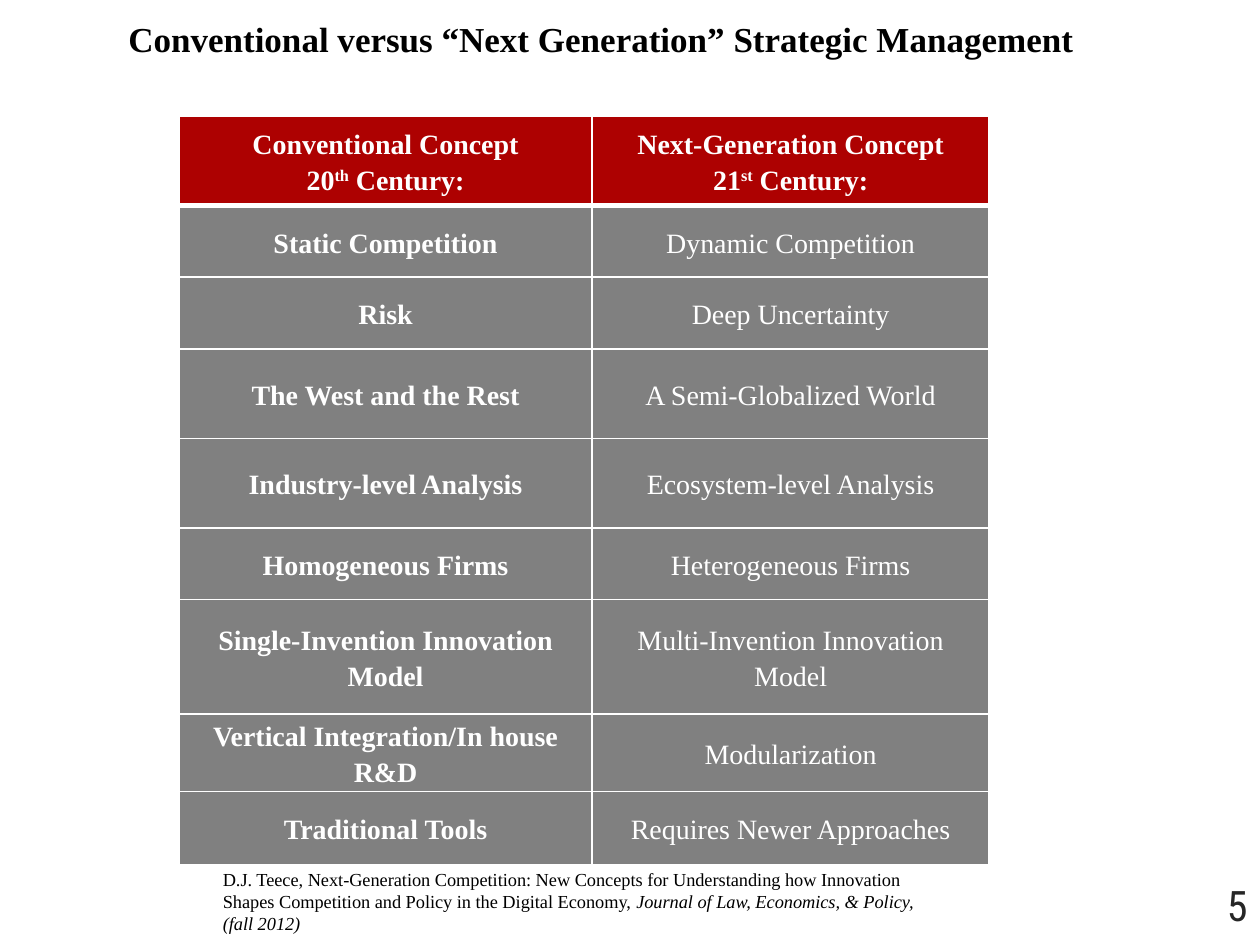
from lxml import etree
from pptx import Presentation
from pptx.dml.color import RGBColor
from pptx.enum import text
from pptx.oxml.ns import qn
from pptx.util import Inches, Pt

W, H = Inches(10), Inches(7.5)
SERIF, CONDENSED = "Times New Roman", "Roboto Condensed"
COLORS = {"header": "AD0101", "body": "808080", "light": "FFFFFF",
          "ink": "000000", "number": "262626"}

# Header cells: lines of (text, superscript) runs
HEADERS = [
    [[("Conventional Concept", False)],
     [("20", False), ("th", True), (" Century:", False)]],
    [[("Next-Generation Concept", False)],
     [("21", False), ("st", True), (" Century:", False)]],
]
CONCEPTS = [
    ("Static Competition", "Dynamic Competition"),
    ("Risk", "Deep Uncertainty"),
    ("The West and the Rest", "A Semi-Globalized World"),
    ("Industry-level Analysis", "Ecosystem-level Analysis"),
    ("Homogeneous Firms", "Heterogeneous Firms"),
    ("Single-Invention Innovation Model", "Multi-Invention Innovation Model"),
    ("Vertical Integration/In house R&D", "Modularization"),
    ("Traditional Tools", "Requires Newer Approaches"),
]
COL_WEIGHTS = [3.28, 3.15]
ROW_WEIGHTS = [0.71, 0.57, 0.57, 0.71, 0.71, 0.57, 0.91, 0.58, 0.58]


def box(x, y, w, h):
    """Turn percentages of the slide into left, top, width, height."""
    return [int(W * x / 100), int(H * y / 100),
            int(W * w / 100), int(H * h / 100)]


def split(total, weights):
    return [int(total * weight / sum(weights)) for weight in weights]


def add_run(p, words, size, color, font=SERIF, bold=False, italic=False):
    r = p.add_run()
    r.text = words
    f = r.font
    f.name, f.size, f.bold, f.italic = font, Pt(size), bold, italic
    f.color.rgb = RGBColor.from_string(COLORS[color])
    return r


def add_text(s, area):
    """Add a wrapping text box and return its frame."""
    tf = s.shapes.add_textbox(*area).text_frame
    tf.word_wrap = True
    return tf


def set_borders(cell, top, bottom):
    tcPr = cell._tc.get_or_add_tcPr()
    widths = {"lnL": 1, "lnR": 1, "lnT": top, "lnB": bottom}
    for i, (side, width) in enumerate(widths.items()):
        ln = etree.Element(qn("a:" + side), w=str(Pt(width)))
        fill = etree.SubElement(ln, qn("a:solidFill"))
        etree.SubElement(fill, qn("a:srgbClr"), val=COLORS["light"])
        tcPr.insert(i, ln)


def fill_cell(cell, lines, fill, bold):
    cell.fill.solid()
    cell.fill.fore_color.rgb = RGBColor.from_string(COLORS[fill])
    cell.vertical_anchor = text.MSO_ANCHOR.MIDDLE
    cell.margin_left = cell.margin_right = Inches(0.05)
    cell.margin_top = cell.margin_bottom = 0
    tf = cell.text_frame
    for i, line in enumerate(lines):
        p = tf.add_paragraph() if i else tf.paragraphs[0]
        p.alignment = text.PP_ALIGN.CENTER
        p.line_spacing = 1.15
        for words, raised in line:
            r = add_run(p, words, 16, "light", bold=bold)
            if raised:
                r.font._element.set("baseline", "30000")


def add_title(s, area):
    p = add_text(s, area).paragraphs[0]
    add_run(p, "Conventional versus “Next Generation” Strategic Management",
            20, "ink", bold=True)


def add_comparison(s, area):
    rows = [HEADERS] + [[[[(words, False)]] for words in pair]
                        for pair in CONCEPTS]
    table = s.shapes.add_table(len(rows), len(COL_WEIGHTS), *area).table
    for col, width in zip(table.columns, split(area[2], COL_WEIGHTS)):
        col.width = width
    for row, height in zip(table.rows, split(area[3], ROW_WEIGHTS)):
        row.height = height
    for i, row in enumerate(rows):
        for j, lines in enumerate(row):
            cell = table.cell(i, j)
            fill_cell(cell, lines, "body" if i else "header",
                      bold=i == 0 or j == 0)
            # Heavy rule between header and body
            set_borders(cell, top=3 if i == 1 else 1, bottom=1 if i else 3)


def add_citation(s, area):
    p = add_text(s, area).paragraphs[0]
    add_run(p, "D.J. Teece, Next-Generation Competition: New Concepts for "
            "Understanding how Innovation Shapes Competition and Policy in "
            "the Digital Economy, ", 10.5, "ink")
    add_run(p, "Journal of Law, Economics, & Policy, (fall 2012)",
            10.5, "ink", italic=True)


def add_number(s, area):
    tf = add_text(s, area)
    tf.vertical_anchor = text.MSO_ANCHOR.MIDDLE
    tf.margin_right = Inches(0.1)
    p = tf.paragraphs[0]
    p.alignment = text.PP_ALIGN.RIGHT
    add_run(p, "5", 24, "number", font=CONDENSED)


def main():
    prs = Presentation()
    prs.slide_width, prs.slide_height = W, H
    s = prs.slides.add_slide(prs.slide_layouts[6])
    add_number(s, box(91.7, 93.07, 8.3, 5.33))
    add_comparison(s, box(14.2, 12.27, 64.3, 78.8))
    add_title(s, box(9.2, 1.2, 80.6, 5.87))
    add_citation(s, box(16.7, 91.2, 57.5, 8.4))
    prs.save("out.pptx")


if __name__ == "__main__":
    main()
